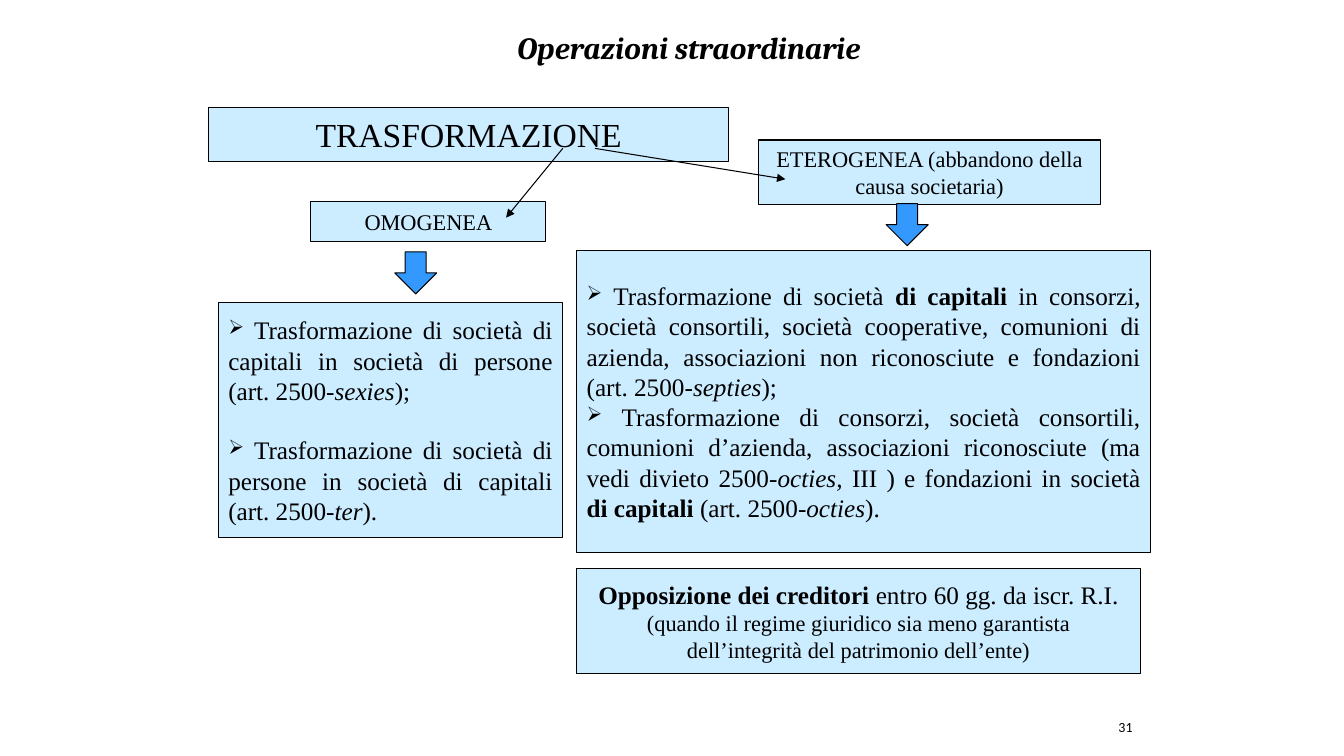
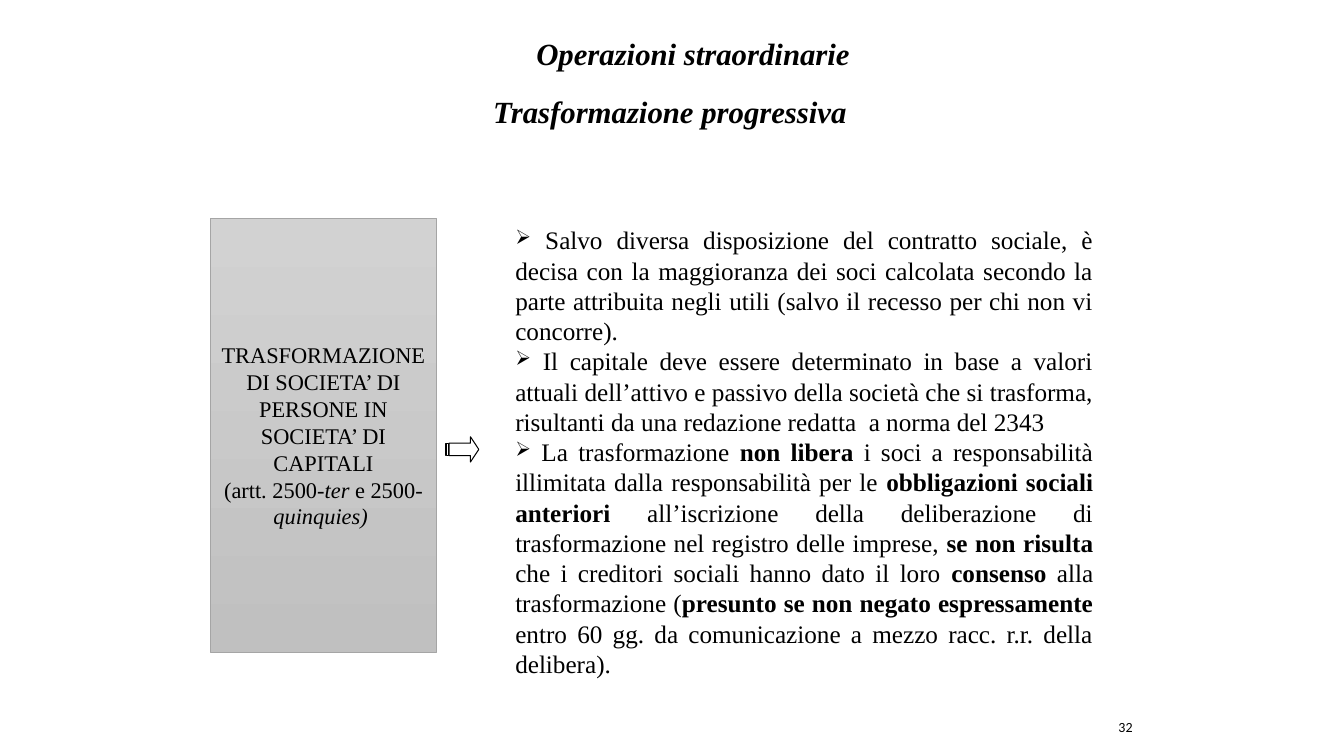
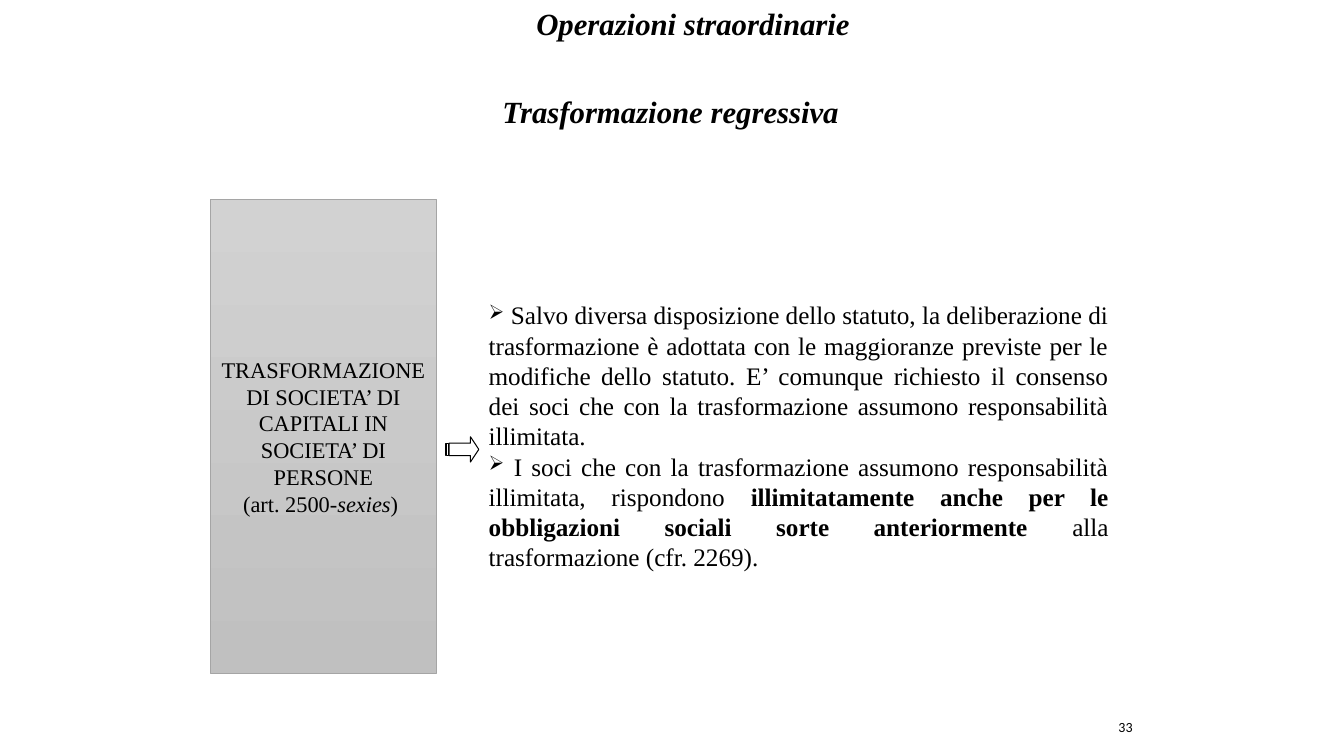
"""Three slides on company transformations: overview, progressive and regressive."""
from dataclasses import dataclass

from lxml.etree import SubElement
from pptx import Presentation
from pptx.dml.color import RGBColor as RGB
from pptx.enum.shapes import MSO_CONNECTOR as Link, MSO_SHAPE as Preset
from pptx.enum.text import PP_ALIGN as Align
from pptx.oxml.ns import qn
from pptx.util import Pt


@dataclass(frozen=True)
class Theme:
    ink: RGB = RGB.from_string("000000")
    pale: RGB = RGB.from_string("CCECFF")
    arrow: RGB = RGB.from_string("3399FF")
    grey_top: RGB = RGB.from_string("D2D2D2")
    grey_bottom: RGB = RGB.from_string("C0C0C0")
    grey_edge: RGB = RGB.from_string("A5A5A5")
    serif: str = "Times New Roman"
    heading_serif: str = "Cambria"
    sans: str = "Calibri"
    banner: int = 24
    title: int = 22
    body: int = 18
    label: int = 16
    number: int = 10
    line: float = 0.75
    thin: float = 0.5


theme = Theme()


def write(shape, lines, size, font=theme.serif, heading=False, bullets=False, wrap=True):
    """Write paragraphs in which *stars* mark bold and _underscores_ mark italic."""
    frame = shape.text_frame
    frame.word_wrap = wrap
    frame.text = "\n".join(lines)
    for paragraph, line in zip(frame.paragraphs, lines):
        paragraph.text = ""
        paragraph.alignment = Align.JUSTIFY if bullets else Align.CENTER
        if bullets:
            properties = paragraph._p.get_or_add_pPr()
            SubElement(properties, qn("a:buSzPct"), val="80000")
            SubElement(properties, qn("a:buChar"), char="➢")
        for b, strong in enumerate(line.split("*")):
            for i, piece in enumerate(strong.split("_")):
                if piece:
                    run = paragraph.add_run()
                    run.text = piece
                    run.font.name, run.font.size = font, Pt(size)
                    run.font.color.rgb = theme.ink
                    run.font.bold = heading or b % 2 == 1
                    run.font.italic = heading or i % 2 == 1


def outline(slide, preset, box, fill=None, edge=theme.ink, weight=theme.line):
    """Add an outlined preset shape, hollow unless a fill is given."""
    shape = slide.shapes.add_shape(preset, *map(Pt, box))
    shape.shadow.inherit = False
    shape.line.color.rgb, shape.line.width = edge, Pt(weight)
    if fill is None:
        shape.fill.background()
    else:
        shape.fill.solid()
        shape.fill.fore_color.rgb = fill
    return shape


deck = Presentation()
deck.slide_width, deck.slide_height = Pt(960), Pt(540)

headings = [
    [("Operazioni straordinarie", theme.heading_serif, (360, 17, 264, 34))],
    [("Trasformazione progressiva", theme.serif, (344, 63, 269, 34)),
     ("Operazioni straordinarie", theme.serif, (375, 21.5, 240, 34))],
    [("Trasformazione regressiva", theme.serif, (350.5, 63, 257, 34)),
     ("Operazioni straordinarie", theme.serif, (375, 0, 240, 34))],
]
slides = []
for number, titles in enumerate(headings, 31):
    slide = deck.slides.add_slide(deck.slide_layouts[6])
    slides.append(slide)
    page = slide.shapes.add_textbox(Pt(786), Pt(510), Pt(36), Pt(19.5))
    write(page, [str(number)], theme.number, theme.sans)
    for title, font, box in titles:
        heading = slide.shapes.add_textbox(*map(Pt, box))
        write(heading, [title], theme.title, font, heading=True, wrap=False)

overview, *details = slides

for box, size, label in [
    ((149, 76.5, 371.5, 39), theme.banner, "TRASFORMAZIONE"),
    ((222, 144, 168, 28.5), theme.label, "OMOGENEA"),
    ((542, 100, 244, 46), theme.label, "ETEROGENEA (abbandono della causa societaria)"),
]:
    write(outline(overview, Preset.RECTANGLE, box, theme.pale), [label], size)

homogeneous = outline(overview, Preset.RECTANGLE, (156, 216, 246, 168), theme.pale)
write(homogeneous, [
    " Trasformazione di società di capitali in società di persone (art. 2500_-sexies_);",
    " Trasformazione di società di persone in società di capitali (art. 2500-_ter_).",
], theme.body, bullets=True)
homogeneous.text_frame.paragraphs[1].space_before = Pt(21)

heterogeneous = outline(overview, Preset.RECTANGLE, (412, 179, 410, 215.5), theme.pale)
write(heterogeneous, [
    " Trasformazione di società *di capitali* in consorzi, società consortili, società "
    "cooperative, comunioni di azienda, associazioni non riconosciute e fondazioni "
    "(art. 2500_-septies_);",
    " Trasformazione di consorzi, società consortili, comunioni d’azienda, associazioni "
    "riconosciute (ma vedi divieto 2500_-octies, _III ) e fondazioni in società "
    "*di capitali* (art. 2500_-octies_).",
], theme.body, bullets=True)

for left, top in [(282, 180), (633, 145.5)]:
    outline(overview, Preset.DOWN_ARROW, (left, top, 30, 30), theme.arrow)

for ends in [(425, 106, 561, 128), (402, 106, 361.5, 155.5)]:
    branch = overview.shapes.add_connector(Link.STRAIGHT, *map(Pt, ends))
    branch.line.color.rgb, branch.line.width = theme.ink, Pt(theme.line)
    SubElement(branch.line._get_or_add_ln(), qn("a:tailEnd"), type="triangle")
    SubElement(branch._element.spPr, qn("a:effectLst"))

opposition = outline(overview, Preset.RECTANGLE, (412, 406, 402.5, 75), theme.pale)
write(opposition, [
    "*Opposizione dei creditori *entro 60 gg. da iscr. R.I.",
    "(quando il regime giuridico sia meno garantista dell’integrità del patrimonio dell’ente)",
], theme.body)
for run in opposition.text_frame.paragraphs[1].runs:
    run.font.size = Pt(theme.label)

cases = [
    ((150, 156, 162, 310),
     ["TRASFORMAZIONE DI SOCIETA’ DI PERSONE IN SOCIETA’ DI CAPITALI",
      "(artt. 2500-_ter _e 2500_-quinquies) _"],
     (361, 157, 427, 335),
     [" Salvo diversa disposizione del contratto sociale, è decisa con la maggioranza dei "
      "soci calcolata secondo la parte attribuita negli utili (salvo il recesso per chi non "
      "vi concorre).",
      " Il capitale deve essere determinato in base a valori attuali dell’attivo e passivo "
      "della società che si trasforma, risultanti da una redazione redatta  a norma del 2343",
      " La trasformazione *non libera* i soci a responsabilità illimitata dalla "
      "responsabilità per le *obbligazioni sociali anteriori* all’iscrizione della "
      "deliberazione di trasformazione nel registro delle imprese, *se non risulta* che i "
      "creditori sociali hanno dato il loro *consenso* alla trasformazione (*presunto se non "
      "negato espressamente *entro 60 gg. da comunicazione a mezzo racc. r.r. della "
      "delibera)."]),
    ((150, 142.5, 162, 338.5),
     ["TRASFORMAZIONE DI SOCIETA’ DI CAPITALI IN SOCIETA’ DI PERSONE",
      "(art. 2500-_sexies_) "],
     (342, 210.5, 457, 204),
     [" Salvo diversa disposizione dello statuto, la deliberazione di trasformazione è "
      "adottata con le maggioranze previste per le modifiche dello statuto. E’ comunque "
      "richiesto il consenso dei soci che con la trasformazione assumono responsabilità "
      "illimitata.",
      " I soci che con la trasformazione assumono responsabilità illimitata, rispondono "
      "*illimitatamente anche per le obbligazioni sociali sorte anteriormente *alla "
      "trasformazione (cfr. 2269)."]),
]
for slide, (subject_box, subject_lines, rules_box, rules_lines) in zip(details, cases):
    subject = outline(slide, Preset.RECTANGLE, subject_box, None, theme.grey_edge, theme.thin)
    subject.fill.gradient()
    subject.fill.gradient_angle = 270
    for stop, shade in zip(subject.fill.gradient_stops, (theme.grey_top, theme.grey_bottom)):
        stop.color.rgb = shade
    write(subject, subject_lines, theme.label)

    pointer = outline(slide, Preset.STRIPED_RIGHT_ARROW, (318, 312, 24, 18))
    pointer.adjustments[0], pointer.adjustments[1] = 0.5, 0.33

    rules = slide.shapes.add_textbox(*map(Pt, rules_box))
    write(rules, rules_lines, theme.body, bullets=True)

deck.save("out.pptx")
